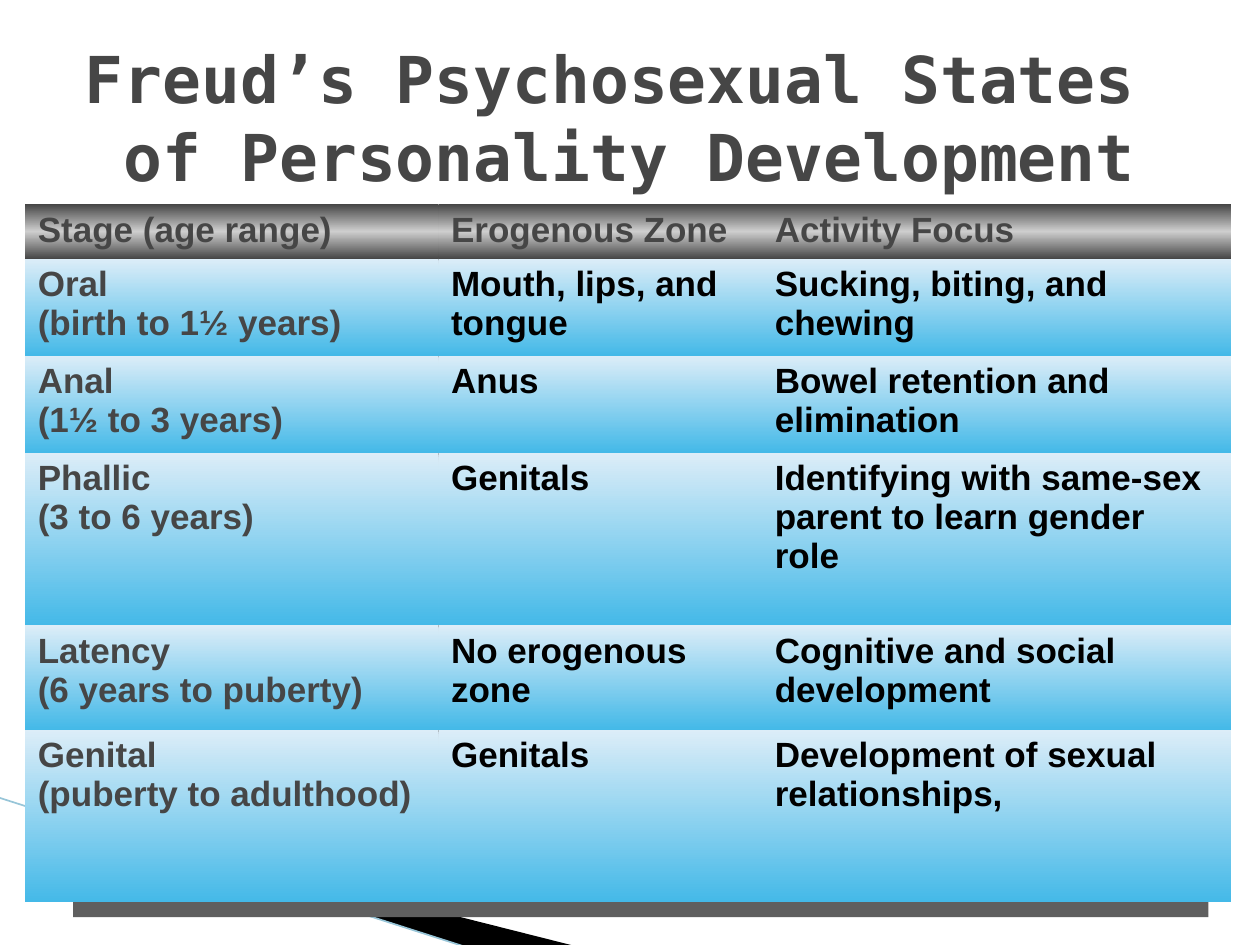
import pptx
import pptx.util
import pptx.oxml
import pptx.oxml.ns
import pptx.dml.color
import pptx.enum.shapes
import pptx.enum.text
from lxml import etree

Inches = pptx.util.Inches
COLORS = {
    "ink": "464646", "sheen": "CECECE", "body": "000000", "shade": "5F5F5F",
    "sky_light": "DCEDF8", "sky": "44B9E8", "curve": "97C5D8",
}
NO_STYLE_NO_GRID = "{2D5ABB26-0587-4C30-8999-92F81FD0307C}"
HEADER_FILL = ["ink", "sheen", "ink"]
ROW_FILL = ["sky_light", "sky"]

TITLE = "Freud’s Psychosexual States \nof Personality Development"
COLUMN_WIDTHS = [3.28, 2.57, 3.72]
ROW_HEIGHTS = [0.43, 0.77, 0.77, 1.37, 0.83, 1.37]
STAGES = [
    ("Stage (age range)", "Erogenous Zone", "Activity Focus"),
    ("Oral \n(birth to 1½ years)", "Mouth, lips, and tongue", "Sucking, biting, and chewing"),
    ("Anal \n(1½ to 3 years)", "Anus", "Bowel retention and elimination"),
    ("Phallic \n(3 to 6 years)", "Genitals",
     "Identifying with same-sex parent to learn gender role"),
    ("Latency \n(6 years to puberty)", "No erogenous zone", "Cognitive and social development"),
    ("Genital \n(puberty to adulthood)", "Genitals", "Development of sexual relationships,"),
]


def rgb(color):
    """Return the named colour."""
    return pptx.dml.color.RGBColor.from_string(COLORS[color])


def write(frame, text, *, size=20, font="Arial", color="ink", bold=True, align=None):
    """Write one paragraph, with line breaks at newlines."""
    frame.word_wrap = True
    paragraph = frame.paragraphs[0]
    paragraph.alignment = align
    for index, line in enumerate(text.split("\n")):
        if index:
            paragraph.add_line_break()
        run = paragraph.add_run()
        run.text = line
        run.font.size = pptx.util.Pt(size)
        run.font.name = font
        run.font.bold = bold
        run.font.color.rgb = rgb(color)


def fill_gradient(cell, colors):
    """Fill a cell with evenly spaced colours from top to bottom."""
    step = 100000 // (len(colors) - 1)
    stops = "".join(
        f'<a:gs pos="{index * step}"><a:srgbClr val="{COLORS[color]}"/></a:gs>'
        for index, color in enumerate(colors))
    gradient = pptx.oxml.parse_xml(
        f'<a:gradFill {pptx.oxml.ns.nsdecls("a")} rotWithShape="1"><a:gsLst>{stops}</a:gsLst>'
        '<a:lin ang="5400000" scaled="0"/></a:gradFill>')
    cell._tc.get_or_add_tcPr().append(gradient)


class SlideBuilder:
    """Hold the style and the current slide."""

    def __init__(self, slide, title_font):
        self.shapes = slide.shapes
        self.title_font = title_font

    def paint(self, shape, color):
        """Give a shape a plain fill without line or shadow."""
        shape.shadow.inherit = False
        shape.fill.solid()
        shape.fill.fore_color.rgb = rgb(color)
        shape.line.fill.background()

    def outline(self, points, color):
        """Draw a filled polygon."""
        start, *rest = [(Inches(x), Inches(y)) for x, y in points]
        builder = self.shapes.build_freeform(*start)
        builder.add_line_segments(rest, close=True)
        self.paint(builder.convert_to_shape(), color)

    def line(self, start, end, color, width):
        """Draw a straight line."""
        connector = self.shapes.add_connector(
            pptx.enum.shapes.MSO_CONNECTOR.STRAIGHT, *map(Inches, (*start, *end)))
        connector.line.color.rgb = rgb(color)
        connector.line.width = pptx.util.Pt(width)
        etree.SubElement(connector._element.spPr, pptx.oxml.ns.qn("a:effectLst"))

    def rectangle(self, box, color):
        """Draw a plain rectangle."""
        rectangle = self.shapes.add_shape(
            pptx.enum.shapes.MSO_SHAPE.RECTANGLE, *map(Inches, box))
        self.paint(rectangle, color)

    def title(self, box, text):
        """Write the centred title."""
        frame = self.shapes.add_textbox(*map(Inches, box)).text_frame
        frame.vertical_anchor = pptx.enum.text.MSO_ANCHOR.MIDDLE
        write(frame, text, size=36.9, font=self.title_font,
              align=pptx.enum.text.PP_ALIGN.CENTER)

    def table(self, left, top, widths, heights, rows):
        """Add a table with a header row and a stage column."""
        box = map(Inches, (left, top, sum(widths), sum(heights)))
        table = self.shapes.add_table(len(heights), len(widths), *box).table
        table.first_row = table.horz_banding = False
        table._tbl.tblPr.find(pptx.oxml.ns.qn("a:tableStyleId")).text = NO_STYLE_NO_GRID
        for column, width in zip(table.columns, widths):
            column.width = Inches(width)
        for row_index, (row, height, texts) in enumerate(zip(table.rows, heights, rows)):
            row.height = Inches(height)
            for column_index, (cell, text) in enumerate(zip(row.cells, texts)):
                is_body = row_index > 0 and column_index > 0
                write(cell.text_frame, text, color="body" if is_body else "ink")
                fill_gradient(cell, ROW_FILL if row_index else HEADER_FILL)


def main():
    """Build and save the slide."""
    deck = pptx.Presentation()
    deck.slide_width, deck.slide_height = Inches(10), Inches(7.5)
    builder = SlideBuilder(deck.slides.add_slide(deck.slide_layouts[6]), "DejaVu Sans Mono")
    builder.outline([(0.53, 6.49), (4.57, 7.51), (3.72, 7.52), (0.54, 6.5)], "body")
    builder.line((-0.01, 6.33), (3.71, 7.52), "curve", 0.95)
    builder.rectangle((0.58, 1.9, 9.01, 5.38), "shade")
    builder.title((0.5, 0.3, 9, 1.25), TITLE)
    builder.table(0.2, 1.62, COLUMN_WIDTHS, ROW_HEIGHTS, STAGES)
    deck.save("out.pptx")


if __name__ == "__main__":
    main()
